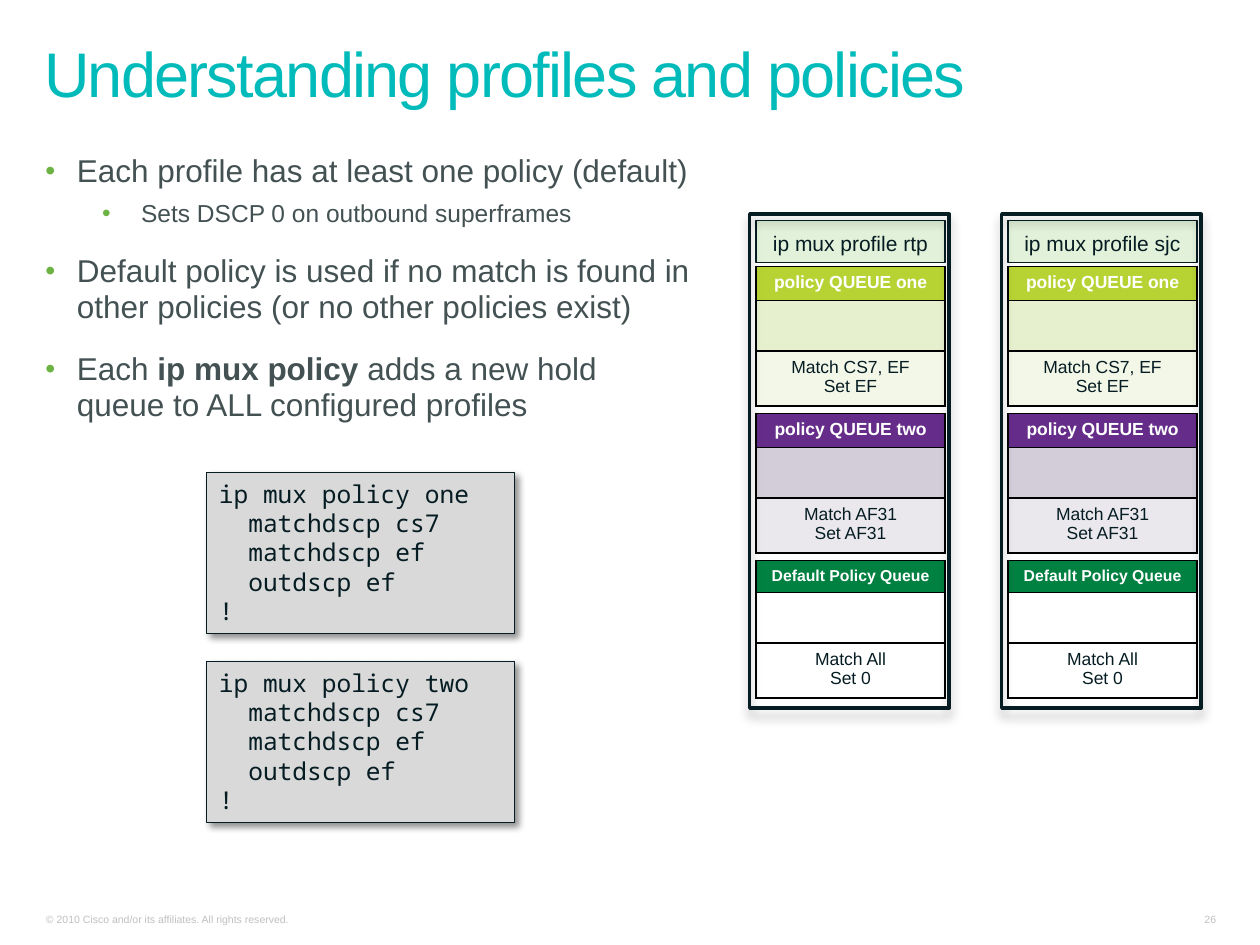
"""Build the slide on profiles and policies: a list, two code boxes and two queue stacks."""
from dataclasses import dataclass

from lxml.etree import SubElement
from pptx import Presentation
from pptx.dml.color import RGBColor
from pptx.enum.shapes import MSO_SHAPE as Shape
from pptx.enum.text import MSO_ANCHOR as Anchor, MSO_AUTO_SIZE as AutoSize, PP_ALIGN as Align
from pptx.oxml import parse_xml
from pptx.oxml.ns import nsdecls, qn
from pptx.util import Pt


@dataclass(frozen=True)
class Theme:
    """Colours, fonts and type sizes of the slide."""
    title: str = "01BBBB"
    body: str = "435153"
    ink: str = "061C23"
    bullet: str = "6DB344"
    muted: str = "C0C0C0"
    header: str = "E2F1D9"
    code: str = "D9D9D9"
    white: str = "FFFFFF"
    black: str = "000000"
    sans: str = "Arial"
    mono: str = "Noto Sans Mono"
    title_size: int = 36
    list_sizes: tuple = (18, 14)
    code_size: int = 14
    header_size: int = 12
    cell_size: int = 10
    default_size: int = 9
    footer_size: int = 6


THEME = Theme()
BULLETS = [
    (0, [("Each profile has at least one policy (default)", False)]),
    (1, [("Sets DSCP 0 on outbound superframes", False)]),
    (0, [("Default policy is used if no match is found in other policies "
          "(or no other policies exist)", False)]),
    (0, [("Each ", False), ("ip mux policy ", True),
         ("adds a new hold queue to ALL configured profiles", False)]),
]
CODE = "ip mux policy {}\n  matchdscp cs7\n  matchdscp ef\n  outdscp ef\n!"
QUEUES = [
    ("policy QUEUE one", "Match CS7, EF\nSet EF", ("B7D333", "E6EFCE", "F3F7E8"), THEME.cell_size),
    ("policy QUEUE two", "Match AF31\nSet AF31", ("652D89", "D3CDDA", "EAE8ED"), THEME.cell_size),
    ("Default Policy Queue", "Match All\nSet 0", ("008041", THEME.white, THEME.white),
     THEME.default_size),
]


def style_run(span, size, color, face=THEME.sans, bold=False):
    """Give a run its type."""
    span.font.name, span.font.size, span.font.bold = face, Pt(size), bold
    span.font.color.rgb = RGBColor.from_string(color)


def write(frame, text, size, color, align=Align.LEFT, face=THEME.sans, bold=False):
    """Fill a text frame with evenly styled lines."""
    frame.text = text
    for para in frame.paragraphs:
        para.alignment = align
        for span in para.runs:
            style_run(span, size, color, face, bold)


def place(shape, left, top, width, height):
    """Move and size a placeholder."""
    shape.left, shape.top, shape.width, shape.height = Pt(left), Pt(top), Pt(width), Pt(height)
    shape.text_frame.auto_size = AutoSize.NONE


def add_title(page, text):
    """Fill the title placeholder."""
    box = page.shapes.title
    place(box, 18, 0, 676, 66)
    write(box.text_frame, text, THEME.title_size, THEME.title)
    box.text_frame.vertical_anchor = Anchor.BOTTOM
    para = box.text_frame.paragraphs[0]
    para.line_spacing = 0.8
    para.runs[0].font._element.set("spc", "-100")


def add_bullet(para, level):
    """Set the indent and the bullet of a list paragraph."""
    margin, hang, percent = ((18, 18, 90), (54.7, 22.3, 100))[level]
    props = para._p.get_or_add_pPr()
    props.set("marL", str(Pt(margin)))
    props.set("indent", str(-Pt(hang)))
    SubElement(SubElement(props, qn("a:buClr")), qn("a:srgbClr"), val=THEME.bullet)
    SubElement(props, qn("a:buSzPct"), val=str(percent * 1000))
    SubElement(props, qn("a:buFont"), typeface=THEME.sans)
    SubElement(props, qn("a:buChar"), char="•")


def add_list(page, items):
    """Fill the body placeholder with a two-level list."""
    box = page.placeholders[1]
    place(box, 18.7, 84.2, 383.5, 412)
    frame = box.text_frame
    for index, (level, spans) in enumerate(items):
        para = frame.add_paragraph() if index else frame.paragraphs[0]
        para.level = level
        para.line_spacing = 0.95
        para.space_before = Pt((14.8, 6)[level] if index else 0)
        add_bullet(para, level)
        for text, bold in spans:
            span = para.add_run()
            span.text = text
            style_run(span, THEME.list_sizes[level], THEME.body, bold=bold)


def add_text(page, area, text, size, color, align=Align.LEFT, anchor=Anchor.TOP):
    """Add a wrapped text box."""
    frame = page.shapes.add_textbox(*map(Pt, area)).text_frame
    frame.word_wrap = True
    frame.vertical_anchor = anchor
    write(frame, text, size, color, align)


def add_box(page, area, fill, weight):
    """Add a rectangle, hollow when there is no fill."""
    box = page.shapes.add_shape(Shape.RECTANGLE, *map(Pt, area))
    box.shadow.inherit = False
    if fill:
        box.fill.solid()
        box.fill.fore_color.rgb = RGBColor.from_string(fill)
    else:
        box.fill.background()
    box.line.color.rgb = RGBColor.from_string(THEME.ink)
    box.line.width = Pt(weight)
    return box


def add_shadow(box, opacity, blur, distance, angle):
    """Cast an outer shadow from a shape."""
    effects = box._element.spPr.find(qn("a:effectLst"))
    shadow = SubElement(effects, qn("a:outerShdw"), blurRad=str(Pt(blur)), dist=str(Pt(distance)),
                        dir=str(angle * 60000), algn="ctr", rotWithShape="0")
    color = SubElement(shadow, qn("a:srgbClr"), val=THEME.black)
    SubElement(color, qn("a:alpha"), val=str(opacity * 1000))


def add_code(page, top, name):
    """Add a shaded box of configuration lines."""
    box = add_box(page, (118, top, 176, 92), THEME.code, 0.75)
    add_shadow(box, 43, 4, 3, 45)
    box.text_frame.vertical_anchor = Anchor.TOP
    write(box.text_frame, CODE.format(name), THEME.code_size, THEME.ink, face=THEME.mono)


def add_borders(cell):
    """Draw a thin line on each side of a cell."""
    for index, side in enumerate(("lnL", "lnR", "lnT", "lnB")):
        line = parse_xml(f'<a:{side} {nsdecls("a")} w="{Pt(1)}"><a:solidFill>'
                         f'<a:srgbClr val="{THEME.black}"/></a:solidFill></a:{side}>')
        cell._tc.get_or_add_tcPr().insert(index, line)


def add_queue(page, left, top, name, rule, fills, size):
    """Add a table with the name, the space and the rule of one queue."""
    heights = (size * 1.15 + 7.7, 29, 31)
    table = page.shapes.add_table(3, 1, Pt(left), Pt(top), Pt(108), Pt(sum(heights))).table
    table.first_row = table.horz_banding = False
    for row, height in zip(table.rows, heights):
        row.height = Pt(height)
    for cell, fill in zip(table.iter_cells(), fills):
        cell.fill.solid()
        cell.fill.fore_color.rgb = RGBColor.from_string(fill)
        add_borders(cell)
    write(table.cell(0, 0).text_frame, name, size, THEME.white, Align.CENTER, bold=True)
    write(table.cell(2, 0).text_frame, rule, THEME.cell_size, THEME.ink, Align.CENTER)


def add_profile(page, left, name):
    """Add a framed profile with its header and stack of queues."""
    add_box(page, (left, 126, 108, 24), THEME.header, 1)
    add_text(page, (left, 128.2, 108, 21.6), f"ip mux profile {name}",
             THEME.header_size, THEME.ink, Align.CENTER)
    for index, queue in enumerate(QUEUES):
        add_queue(page, left, 152.4 + 84 * index, *queue)
    add_shadow(add_box(page, (left - 3.6, 122.4, 114, 282.2), None, 2), 27, 6, 4, 90)


def main():
    """Assemble and save the deck."""
    deck = Presentation()
    deck.slide_width, deck.slide_height = Pt(720), Pt(540)
    page = deck.slides.add_slide(deck.slide_layouts[1])
    add_title(page, "Understanding profiles and policies")
    add_list(page, BULLETS)
    for top, name in ((270, "one"), (378, "two")):
        add_code(page, top, name)
    for left, name in ((432, "rtp"), (576, "sjc")):
        add_profile(page, left, name)
    for area, text, align in (
            ((19.2, 518.4, 269, 14), "© 2010 Cisco and/or its affiliates. All rights reserved.", Align.LEFT),
            ((672, 518.4, 30, 14), "26", Align.RIGHT)):
        add_text(page, area, text, THEME.footer_size, THEME.muted, align, Anchor.BOTTOM)
    deck.save("out.pptx")


if __name__ == "__main__":
    main()
